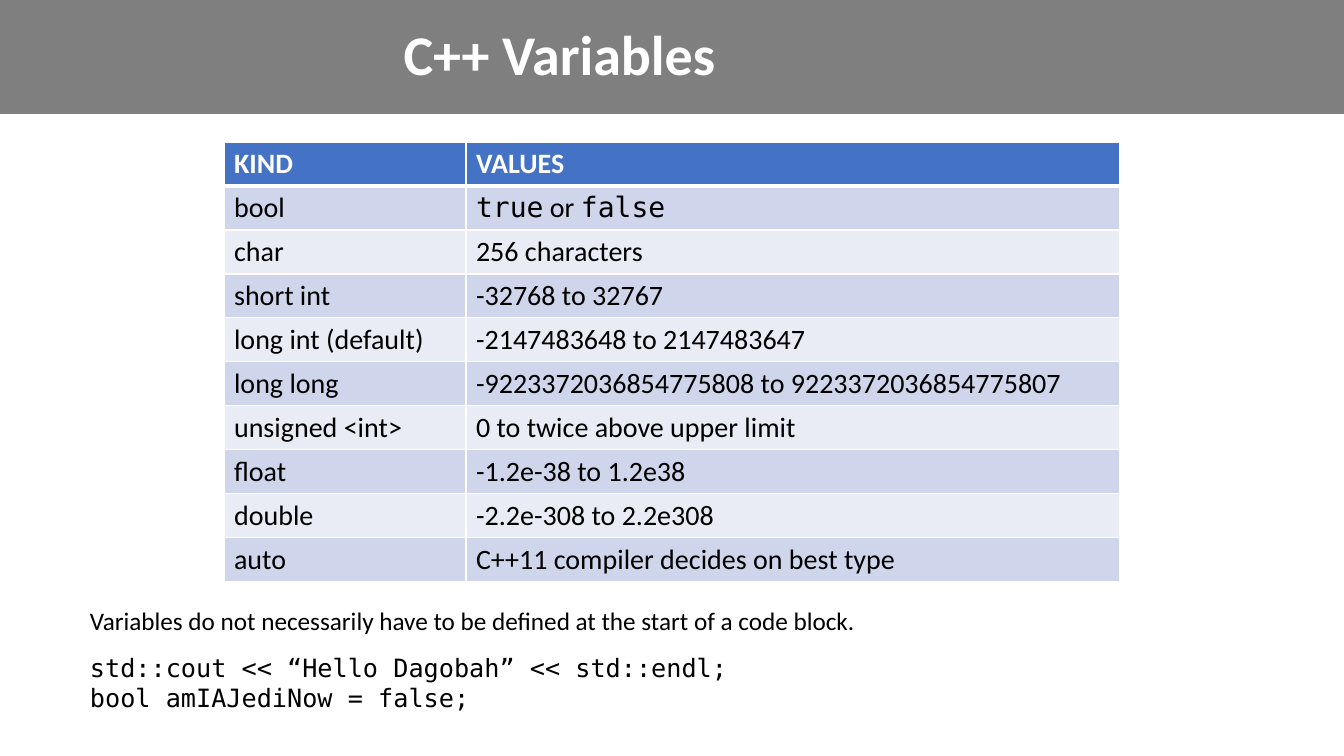
"""Build the C++ Variables slide: title band, table of types and a code sample."""
from pptx import Presentation
from pptx import util as u
from pptx.dml.color import RGBColor
from pptx.enum import shapes, text
from pptx.oxml import parse_xml
from pptx.oxml.ns import nsdecls

TITLE = "C++ Variables"
HEADINGS = ("KIND", "VALUES")
KINDS = [
    ("bool", [("true", "code"), (" or ", "body"), ("false", "code")]),
    ("char", "256 characters"),
    ("short int", "-32768 to 32767"),
    ("long int (default)", "-2147483648 to 2147483647"),
    ("long long", "-9223372036854775808 to 9223372036854775807"),
    ("unsigned <int>", "0 to twice above upper limit"),
    ("float", "-1.2e-38 to 1.2e38"),
    ("double", "-2.2e-308 to 2.2e308"),
    ("auto", "C++11 compiler decides on best type"),
]
NOTE = "Variables do not necessarily have to be defined at the start of a code block."
CODE = [
    "std::cout << “Hello Dagobah” << std::endl;",
    "bool amIAJediNow = false;",
]

THEME = {
    "fonts": {"body": "Calibri", "code": "DejaVu Sans Mono"},
    "sizes": {"title": 40, "table": 20, "note": 18},
    "white": "FFFFFF",
    "black": "000000",
    "header": "4472C4",
    "stripes": ("CFD5EA", "E9EBF5"),
    "band_alpha": 50,
    "code_gap": 12,
    "thin": 1,
    "thick": 3,
}
SLIDE = (1344, 756)
BAND = (-3, -2, 1348, 116)
TITLE_BOX = (22, 12, 1075, 91)
TABLE_AT = (224, 142)
COLUMNS = (242, 654)
ROW = 44
NOTE_BOX = (80, 600, 1091, 119)
SCALE = 914400 / 100.8


def px(*lengths):
    return [u.Emu(round(length * SCALE)) for length in lengths]


def add_run(paragraph, words, size, colour, bold=False, face="body"):
    run = paragraph.add_run()
    run.text = words
    run.font.name = THEME["fonts"][face]
    run.font.size = u.Pt(THEME["sizes"][size])
    run.font.bold = bold
    run.font.color.rgb = RGBColor.from_string(THEME[colour])


def add_frame(slide, box):
    frame = slide.shapes.add_textbox(*px(*box)).text_frame
    frame.word_wrap = True
    return frame


def add_borders(cell, top, bottom):
    properties = cell._tc.get_or_add_tcPr()
    thin = THEME["thin"]
    for side, points in (("L", thin), ("R", thin), ("T", top), ("B", bottom)):
        properties.append(parse_xml(
            f'<a:ln{side} {nsdecls("a")} w="{u.Pt(points)}"><a:solidFill>'
            f'<a:srgbClr val="{THEME["white"]}"/></a:solidFill></a:ln{side}>'))


def add_title(slide):
    band = slide.shapes.add_shape(shapes.MSO_SHAPE.RECTANGLE, *px(*BAND))
    band.shadow.inherit = False
    band.line.fill.background()
    band.fill.solid()
    band.fill.fore_color.rgb = RGBColor.from_string(THEME["black"])
    shade = band.fill._xPr.find(".//{*}srgbClr")
    shade.append(parse_xml(
        f'<a:alpha {nsdecls("a")} val="{THEME["band_alpha"] * 1000}"/>'))

    frame = add_frame(slide, TITLE_BOX)
    frame.vertical_anchor = text.MSO_ANCHOR.MIDDLE
    heading = frame.paragraphs[0]
    heading.alignment = text.PP_ALIGN.CENTER
    heading.line_spacing = 0.9
    add_run(heading, TITLE, "title", "white", bold=True)


def add_kinds(slide):
    rows = [HEADINGS, *KINDS]
    area = (*TABLE_AT, sum(COLUMNS), ROW * len(rows))
    table = slide.shapes.add_table(len(rows), len(COLUMNS), *px(*area)).table
    for column, width in zip(table.columns, px(*COLUMNS)):
        column.width = width
    for r, row in enumerate(rows):
        header = r == 0
        fill = THEME["header"] if header else THEME["stripes"][(r - 1) % 2]
        top = THEME["thick" if r == 1 else "thin"]
        bottom = THEME["thick" if header else "thin"]
        for c, entry in enumerate(row):
            cell = table.cell(r, c)
            add_borders(cell, top, bottom)
            cell.fill.solid()
            cell.fill.fore_color.rgb = RGBColor.from_string(fill)
            pieces = [(entry, "body")] if isinstance(entry, str) else entry
            for words, face in pieces:
                add_run(cell.text_frame.paragraphs[0], words, "table",
                        "white" if header else "black", header, face)


def add_note(slide):
    frame = add_frame(slide, NOTE_BOX)
    frame.auto_size = text.MSO_AUTO_SIZE.SHAPE_TO_FIT_TEXT
    add_run(frame.paragraphs[0], NOTE, "note", "black")
    for i, statement in enumerate(CODE):
        line = frame.add_paragraph()
        if i == 0:
            line.space_before = u.Pt(THEME["code_gap"])
        add_run(line, statement, "note", "black", face="code")


def main():
    deck = Presentation()
    deck.slide_width, deck.slide_height = px(*SLIDE)
    slide = deck.slides.add_slide(deck.slide_layouts[6])
    add_title(slide)
    add_kinds(slide)
    add_note(slide)
    deck.save("out.pptx")


if __name__ == "__main__":
    main()
